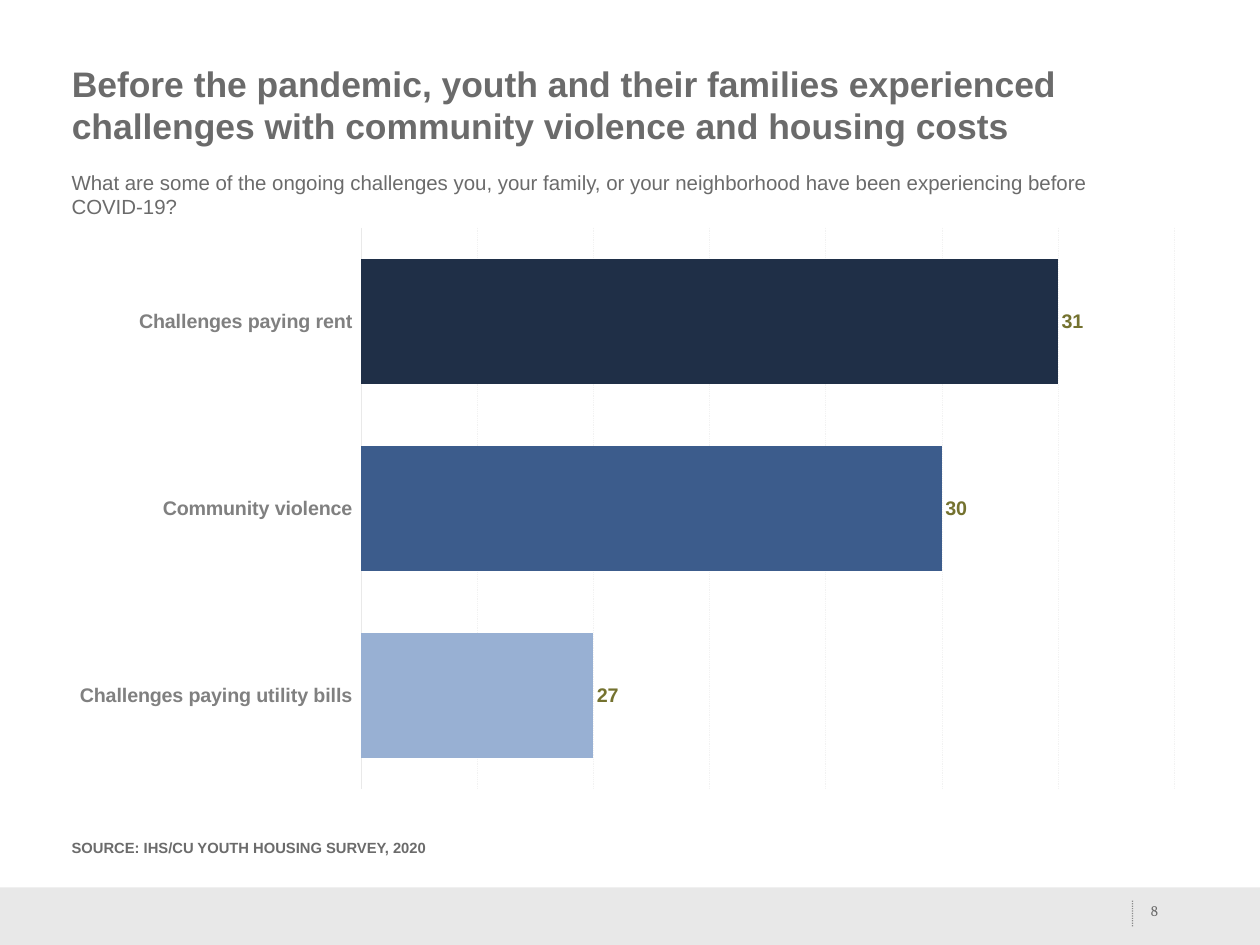
"""Build the slide on challenges that youth faced before the pandemic."""
from dataclasses import dataclass

from lxml import etree
from pptx import Presentation
from pptx.chart.data import CategoryChartData
from pptx.dml.color import RGBColor
from pptx.enum.chart import XL_CHART_TYPE, XL_LABEL_POSITION, XL_TICK_LABEL_POSITION, XL_TICK_MARK
from pptx.enum.dml import MSO_LINE
from pptx.enum.shapes import MSO_CONNECTOR, MSO_SHAPE
from pptx.enum.text import MSO_ANCHOR, MSO_AUTO_SIZE, PP_ALIGN
from pptx.oxml.ns import qn
from pptx.slide import Slide
from pptx.util import Inches, Pt

BAR_CLUSTERED = XL_CHART_TYPE.BAR_CLUSTERED
OUTSIDE_END = XL_LABEL_POSITION.OUTSIDE_END
LABELS_LOW = XL_TICK_LABEL_POSITION.LOW
NO_TICK = XL_TICK_MARK.NONE
DOTTED = MSO_LINE.ROUND_DOT
STRAIGHT = MSO_CONNECTOR.STRAIGHT
RECTANGLE = MSO_SHAPE.RECTANGLE
TOP, BOTTOM = MSO_ANCHOR.TOP, MSO_ANCHOR.BOTTOM
LEFT, CENTER = PP_ALIGN.LEFT, PP_ALIGN.CENTER
NO_FIT = MSO_AUTO_SIZE.NONE


@dataclass(frozen=True)
class Theme:
    """Colours, fonts and type sizes of the slide."""
    text: str = "6B6B6B"
    category: str = "808080"
    value: str = "74722F"
    axis: str = "E9E9E9"
    grid: str = "F2F2F2"
    footer: str = "E8E8E8"
    sans: str = "Arial"
    serif: str = "Cambria"
    title_size: float = 28.8
    question_size: float = 16.6
    chart_size: float = 16
    small_size: float = 12


@dataclass(frozen=True)
class Box:
    """A place on the slide in inches."""
    left: float
    top: float
    width: float
    height: float


@dataclass(frozen=True)
class TextItem:
    """A text with its place and format."""
    text: str
    box: Box
    size: float
    bold: bool = False
    font: str = "Arial"
    align: PP_ALIGN = LEFT
    anchor: MSO_ANCHOR = TOP
    inset: tuple[float, float] = (0.1, 0.05)
    line_spacing: float = 1.0


@dataclass(frozen=True)
class Bar:
    """One bar of the chart."""
    category: str
    value: int
    color: str


THEME = Theme()
MARGIN, CONTENT_WIDTH = 0.71, 12.8
SLIDE_WIDTH, SLIDE_HEIGHT = 14.22, 10.67

TITLE = TextItem(
    "Before the pandemic, youth and their families experienced "
    "challenges with community violence and housing costs",
    Box(MARGIN, 0.65, CONTENT_WIDTH, 0.74), THEME.title_size, bold=True)
TEXTS = [
    TextItem("What are some of the ongoing challenges you, your family, or your "
             "neighborhood have been experiencing before COVID-19?",
             Box(MARGIN, 1.87, CONTENT_WIDTH, 0.58), THEME.question_size),
    TextItem("SOURCE: IHS/CU YOUTH HOUSING SURVEY, 2020",
             Box(MARGIN, 9.42, 13.51, 0.6), THEME.small_size, bold=True),
    TextItem("8", Box(12.85, 9.81, 0.36, 0.57), THEME.small_size, font=THEME.serif,
             align=CENTER, anchor=BOTTOM, inset=(0, 0), line_spacing=1.5),
]
CHART_BOX = Box(MARGIN, 2.44, CONTENT_WIDTH, 6.6)
PLOT_LAYOUT = {"x": 0.263, "y": 0.02, "w": 0.717, "h": 0.96}
BARS = [
    Bar("Challenges paying rent", 31, "1F2F47"),
    Bar("Community violence", 30, "3C5C8C"),
    Bar("Challenges paying utility bills", 27, "98B0D3"),
]


def rgb(color: str) -> RGBColor:
    """Turn a hex string into a colour."""
    return RGBColor.from_string(color)


def lengths(box: Box) -> tuple[Inches, ...]:
    """Give the four lengths of a box."""
    return tuple(Inches(value) for value in (box.left, box.top, box.width, box.height))


def style_font(font, color: str, size: float, bold: bool, name: str = THEME.sans) -> None:
    """Set the look of a font."""
    font.name, font.size, font.bold = name, Pt(size), bold
    font.color.rgb = rgb(color)


def style_line(line, color: str, width: float) -> None:
    """Set the colour and width of a line."""
    line.color.rgb = rgb(color)
    line.width = Pt(width)


def write_text(shape, item: TextItem) -> None:
    """Place a shape and fill it with formatted text."""
    shape.left, shape.top, shape.width, shape.height = lengths(item.box)
    frame = shape.text_frame
    frame.word_wrap = True
    frame.auto_size = NO_FIT
    frame.vertical_anchor = item.anchor
    frame.margin_left = frame.margin_right = Inches(item.inset[0])
    frame.margin_top = frame.margin_bottom = Inches(item.inset[1])
    paragraph = frame.paragraphs[0]
    paragraph.alignment = item.align
    paragraph.line_spacing = item.line_spacing
    run = paragraph.add_run()
    run.text = item.text
    style_font(run.font, THEME.text, item.size, item.bold, item.font)


def draw_footer(slide: Slide) -> None:
    """Draw the footer band and its dotted divider."""
    band = slide.shapes.add_shape(RECTANGLE, *lengths(Box(0, 10.02, SLIDE_WIDTH, 0.65)))
    band.shadow.inherit = False
    band.fill.solid()
    band.fill.fore_color.rgb = rgb(THEME.footer)
    band.line.fill.background()
    divider = slide.shapes.add_connector(
        STRAIGHT, Inches(12.78), Inches(10.17), Inches(12.78), Inches(10.46))
    style_line(divider.line, THEME.text, 1)
    divider.line.dash_style = DOTTED
    properties = divider.element.spPr
    color = properties.find(".//" + qn("a:srgbClr"))
    etree.SubElement(color, qn("a:alpha"), val="75000")
    etree.SubElement(properties, qn("a:effectLst"))


def fix_plot_area(chart) -> None:
    """Pin the inner plot area to its place in the chart."""
    plot_area = chart.element.chart.plotArea
    for old in plot_area.findall(qn("c:layout")):
        plot_area.remove(old)
    layout = etree.Element(qn("c:layout"))
    manual = etree.SubElement(layout, qn("c:manualLayout"))
    settings = {"layoutTarget": "inner", "xMode": "edge", "yMode": "edge", **PLOT_LAYOUT}
    for tag, value in settings.items():
        etree.SubElement(manual, qn(f"c:{tag}"), val=str(value))
    plot_area.insert(0, layout)


def draw_chart(slide: Slide) -> None:
    """Draw the bar chart of challenges."""
    data = CategoryChartData()
    data.categories = [bar.category for bar in BARS]
    data.add_series("Series 1", [bar.value for bar in BARS])
    chart = slide.shapes.add_chart(BAR_CLUSTERED, *lengths(CHART_BOX), data).chart
    chart.has_legend = chart.has_title = False
    style_font(chart.font, THEME.text, 10, False)

    categories = chart.category_axis
    categories.reverse_order = True
    categories.major_tick_mark = categories.minor_tick_mark = NO_TICK
    categories.tick_label_position = LABELS_LOW
    style_font(categories.tick_labels.font, THEME.category, THEME.chart_size, True)
    style_line(categories.format.line, THEME.axis, 0.75)

    values = chart.value_axis
    values.minimum_scale, values.maximum_scale, values.major_unit = 25, 32, 1
    values.has_major_gridlines = True
    grid = values.major_gridlines.format.line
    style_line(grid, THEME.grid, 0.75)
    grid.dash_style = DOTTED
    values.visible = False

    plot = chart.plots[0]
    plot.gap_width = 50
    plot.vary_by_categories = False
    series = plot.series[0]
    for index, bar in enumerate(BARS):
        fill = series.points[index].format.fill
        fill.solid()
        fill.fore_color.rgb = rgb(bar.color)
    labels = series.data_labels
    labels.show_value = True
    labels.position = OUTSIDE_END
    style_font(labels.font, THEME.value, THEME.chart_size, True)
    fix_plot_area(chart)


def main() -> None:
    """Build and save the presentation."""
    presentation = Presentation()
    presentation.slide_width = Inches(SLIDE_WIDTH)
    presentation.slide_height = Inches(SLIDE_HEIGHT)
    slide = presentation.slides.add_slide(presentation.slide_layouts[5])
    draw_footer(slide)
    write_text(slide.shapes.title, TITLE)
    for item in TEXTS:
        write_text(slide.shapes.add_textbox(*lengths(item.box)), item)
    draw_chart(slide)
    presentation.save("out.pptx")


if __name__ == "__main__":
    main()
